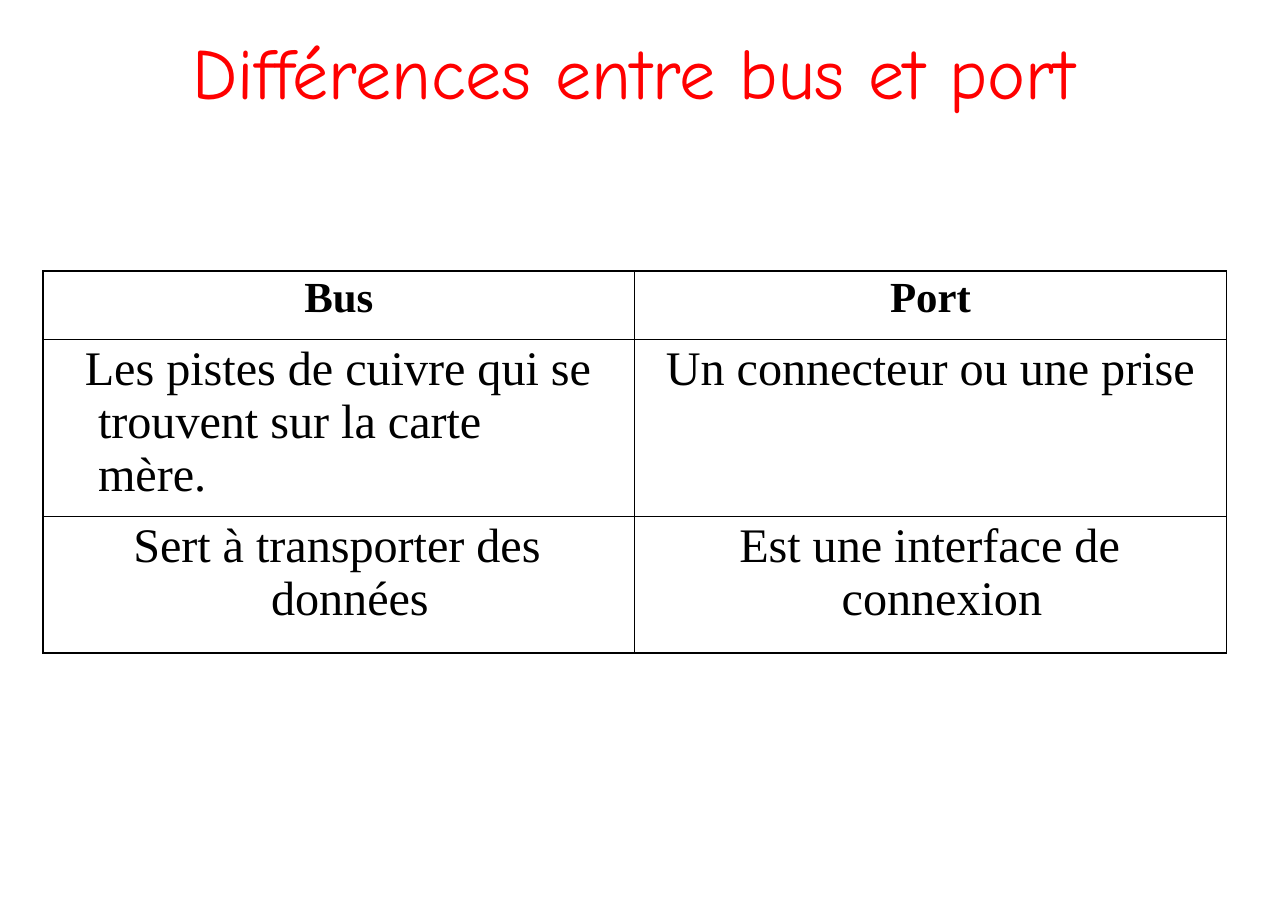
"""Build the slide that compares a bus with a port."""
from lxml import etree
from pptx import Presentation
from pptx.dml.color import RGBColor
from pptx.enum import text as t
from pptx.oxml import ns
from pptx.util import Inches, Pt

TITLE = "Différences entre bus et port"
MID, LEFT = t.PP_ALIGN.CENTER, t.PP_ALIGN.LEFT
HEAD = {"size": Pt(28), "bold": True}
BODY = {"size": Pt(31.5), "bold": False}
ROWS = [
    (0.62, HEAD, [("Bus", MID, 0, 0, 0), ("Port", MID, 0, 0, 0)]),
    (1.61, BODY, [
        ("Les pistes de cuivre qui se trouvent sur la carte mère.", LEFT, 0.5, -0.12, 0.36),
        ("Un connecteur ou une prise", MID, 0, 0, 0)]),
    (1.24, BODY, [
        ("Sert à transporter des données", LEFT, 2.07, -1.25, 0),
        ("Est une interface de connexion", LEFT, 1.88, -0.93, 0)]),
]
COL = 5.37


def color(code):
    return RGBColor.from_string(code)


def apply(item, form):
    for key, value in form.items():
        setattr(item, key, value)


def write(frame, words, align, before, font, name, code):
    frame.text = words
    para = frame.paragraphs[0]
    apply(para, {"alignment": align, "space_before": Pt(before), "line_spacing": 1.0})
    face = para.runs[0].font
    apply(face, {"name": name, **font})
    face.color.rgb = color(code)
    return para


def border(cell):
    props = cell._tc.get_or_add_tcPr()
    for spot, side in enumerate(("lnL", "lnR", "lnT", "lnB")):
        line = etree.Element(ns.qn("a:" + side), w=str(Pt(1)))
        fill = etree.SubElement(line, ns.qn("a:solidFill"))
        etree.SubElement(fill, ns.qn("a:srgbClr"), val="000000")
        props.insert(spot, line)


def main():
    deck = Presentation()
    apply(deck, {"slide_width": Inches(11.69), "slide_height": Inches(8.27)})
    slide = deck.slides.add_slide(deck.slide_layouts[5])

    title = slide.shapes.title
    apply(title, {"left": Inches(0), "top": Inches(0.23),
                  "width": Inches(11.51), "height": Inches(0.82)})
    frame = title.text_frame
    apply(frame, {"margin_left": 0, "margin_right": 0, "margin_bottom": 0,
                  "margin_top": Inches(0.02), "word_wrap": True,
                  "auto_size": t.MSO_AUTO_SIZE.NONE,
                  "vertical_anchor": t.MSO_ANCHOR.TOP})
    write(frame, TITLE, MID, 1.4, {"size": Pt(47)}, "Comic Neue", "FF0000")

    high = sum(row[0] for row in ROWS)
    table = slide.shapes.add_table(len(ROWS), 2, Inches(0.39), Inches(2.46),
                                   Inches(2 * COL), Inches(high)).table
    apply(table, {"first_row": False, "horz_banding": False})
    for col in table.columns:
        col.width = Inches(COL)
    for r, (tall, font, cells) in enumerate(ROWS):
        table.rows[r].height = Inches(tall)
        for c, (words, align, left, first, right) in enumerate(cells):
            cell = table.cell(r, c)
            apply(cell, {"margin_left": 0, "margin_right": Inches(right),
                         "margin_top": Inches(0.03), "margin_bottom": 0})
            cell.fill.solid()
            cell.fill.fore_color.rgb = color("FFFFFF")
            border(cell)
            para = write(cell.text_frame, words, align, 2, font,
                         "Times New Roman", "000000")
            props = para._p.get_or_add_pPr()
            props.set("marL", str(Inches(left)))
            props.set("indent", str(Inches(first)))
    deck.save("out.pptx")


if __name__ == "__main__":
    main()
